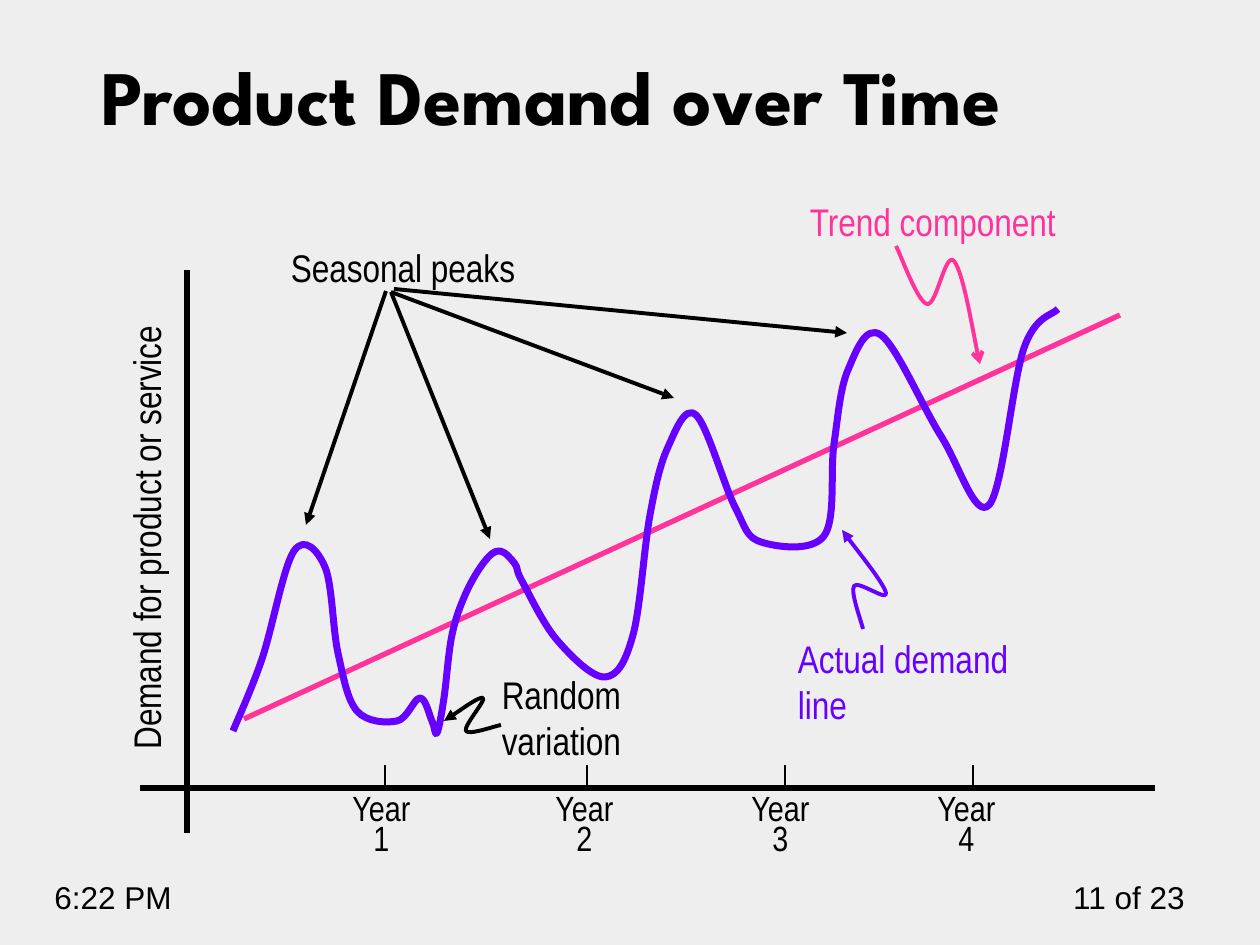
from dataclasses import dataclass

from lxml import etree
from pptx import Presentation
from pptx.dml.color import RGBColor
from pptx.enum.shapes import MSO_CONNECTOR
from pptx.enum.text import MSO_ANCHOR, MSO_AUTO_SIZE, PP_ALIGN
from pptx.oxml.ns import qn
from pptx.util import Inches, Pt

PX = Inches(1) / 126
LEFT, CENTER, RIGHT = PP_ALIGN.LEFT, PP_ALIGN.CENTER, PP_ALIGN.RIGHT
BOTTOM = MSO_ANCHOR.BOTTOM
NO_FIT, GROW = MSO_AUTO_SIZE.NONE, MSO_AUTO_SIZE.SHAPE_TO_FIT_TEXT
STRAIGHT = MSO_CONNECTOR.STRAIGHT


@dataclass(frozen=True)
class Theme:
    back: str = "EEEEEE"
    ink: str = "000000"
    trend: str = "FF3399"
    demand: str = "6600FF"
    title_font: str = "League Spartan"
    label_font: str = "Arial Narrow"
    footer_font: str = "Arial"
    title_size: int = 44
    label_size: int = 22
    year_size: int = 20
    footer_size: int = 18
    tick: float = 0.75
    arrow: float = 2.25
    axis: float = 3
    curve: float = 4


T = Theme()

# Points that the demand curve passes through, in px
DEMAND = [
    (233, 731), (262, 659), (294, 551), (325, 567), (338, 653), (357, 711),
    (397, 721), (420, 698), (432, 721), (437, 733), (444, 698), (452, 635),
    (466, 593), (485, 561), (500, 551), (515, 564), (522, 581), (557, 640),
    (605, 677), (633, 635), (650, 515), (668, 447), (696, 415), (735, 507),
    (761, 542), (824, 536), (834, 444), (848, 370), (881, 335), (941, 436),
    (989, 505), (1024, 348), (1058, 309),
]


def px(*values):
    return [round(v * PX) for v in values]


def style_text(tf, size, font, color, align=LEFT, spacing=None, bold=False):
    for p in tf.paragraphs:
        p.alignment = align
        p.line_spacing = spacing
        for r in p.runs:
            r.font.size = Pt(size)
            r.font.name = font
            r.font.bold = bold
            r.font.color.rgb = RGBColor.from_string(color)


def add_title(slide, text, box):
    title = slide.shapes.title
    title.left, title.top, title.width, title.height = px(*box)
    tf = title.text_frame
    tf.text = text
    tf.auto_size = NO_FIT
    tf.vertical_anchor = BOTTOM
    style_text(tf, T.title_size, T.title_font, T.ink, spacing=0.8, bold=True)


def add_text(slide, text, box, size=T.label_size, font=T.label_font,
             color=T.ink, align=LEFT, spacing=None, wrap=False):
    tb = slide.shapes.add_textbox(*px(*box))
    tf = tb.text_frame
    tf.text = text
    tf.word_wrap = wrap
    tf.auto_size = GROW
    tf.margin_left = tf.margin_right = Inches(0.11)
    style_text(tf, size, font, color, align, spacing)
    return tb


def style_line(shape, color, width, head=None):
    shape.line.color.rgb = RGBColor.from_string(color)
    shape.line.width = Pt(width)
    if head:
        ln = shape.line._ln
        etree.SubElement(ln, qn("a:tailEnd"), type=head)


def add_line(slide, start, end, color, width, head=None):
    line = slide.shapes.add_connector(STRAIGHT, *px(*start, *end))
    style_line(line, color, width, head)
    etree.SubElement(line._element.spPr, qn("a:effectLst"))


def bezier_points(knots):
    """Control and end points of a smooth curve through the knots."""
    ends = [knots[0], *knots, knots[-1]]
    points = []
    for a, b, c, d in zip(ends, ends[1:], ends[2:], ends[3:]):
        points.append([q + (r - p) / 6 for p, q, r in zip(a, b, c)])
        points.append([r - (s - q) / 6 for q, r, s in zip(b, c, d)])
        points.append(c)
    return points


def add_curve(slide, knots, color, width, head=None):
    builder = slide.shapes.build_freeform(*px(*knots[0]))
    builder.add_line_segments([px(*pt) for pt in bezier_points(knots)],
                              close=False)
    sp = builder.convert_to_shape()
    # Join each three straight segments into one cubic segment
    segments = list(sp._element.iter(qn("a:lnTo")))
    for first, second, third in zip(*[iter(segments)] * 3):
        first.tag = qn("a:cubicBezTo")
        for other in (second, third):
            first.append(other[0])
            other.getparent().remove(other)
    sp.fill.background()
    sp.shadow.inherit = False
    style_line(sp, color, width, head)


def add_axes(slide):
    add_line(slide, (140, 788), (1155, 788), T.ink, T.axis)
    add_line(slide, (187, 833), (187, 270), T.ink, T.axis)
    add_line(slide, (185, 788), (185, 810), T.ink, T.tick)
    years = [(385, 336), (587, 539), (785, 735), (973, 921)]
    for year, (tick, left) in enumerate(years, 1):
        add_line(slide, (tick, 765), (tick, 788), T.ink, T.tick)
        add_text(slide, f"Year\n{year}", (left, 792, 91, 71), T.year_size,
                 align=CENTER, spacing=0.7)
    label = add_text(slide, "Demand for product or service",
                     (-91, 496, 475, 60))
    label.rotation = 270


def add_footer(slide):
    for text, box, align in [("11 of 23", (1050, 872, 147, 50), RIGHT),
                             ("6:22 PM", (42, 872, 199, 50), LEFT)]:
        tb = add_text(slide, text, box, T.footer_size, T.footer_font,
                      align=align, wrap=True)
        tb.text_frame.margin_left = tb.text_frame.margin_right = Inches(0.1)


def main():
    prs = Presentation()
    prs.slide_width, prs.slide_height = Inches(10), Inches(7.5)
    slide = prs.slides.add_slide(prs.slide_layouts[5])
    slide.background.fill.solid()
    slide.background.fill.fore_color.rgb = RGBColor.from_string(T.back)

    add_footer(slide)
    add_title(slide, "Product Demand over Time", (89, -10, 1120, 157))
    add_axes(slide)

    # Trend
    add_line(slide, (244, 719), (1120, 315), T.trend, T.axis)
    add_text(slide, "Trend component", (796, 192, 294, 59), color=T.trend)
    add_curve(slide, [(896, 246), (927, 304), (954, 261), (980, 364)],
              T.trend, T.arrow, "arrow")

    # Actual demand
    add_text(slide, "Actual demand line", (784, 629, 247, 106),
             color=T.demand, wrap=True)
    add_curve(slide, DEMAND, T.demand, T.curve)
    add_curve(slide, [(863, 629), (854, 586), (886, 593), (842, 530)],
              T.demand, T.arrow, "triangle")

    # Random variation
    add_text(slide, "Random variation", (488, 665, 178, 106), wrap=True)
    add_curve(slide, [(501, 725), (466, 731), (483, 698), (444, 721)],
              T.ink, T.arrow, "triangle")

    # Seasonal peaks
    add_text(slide, "Seasonal peaks", (277, 238, 263, 59))
    for start, peak in [((386, 291), (306, 525)), ((391, 292), (490, 539)),
                        ((391, 292), (674, 398)), ((394, 289), (847, 333))]:
        add_line(slide, start, peak, T.ink, T.arrow, "triangle")

    prs.save("out.pptx")


if __name__ == "__main__":
    main()
